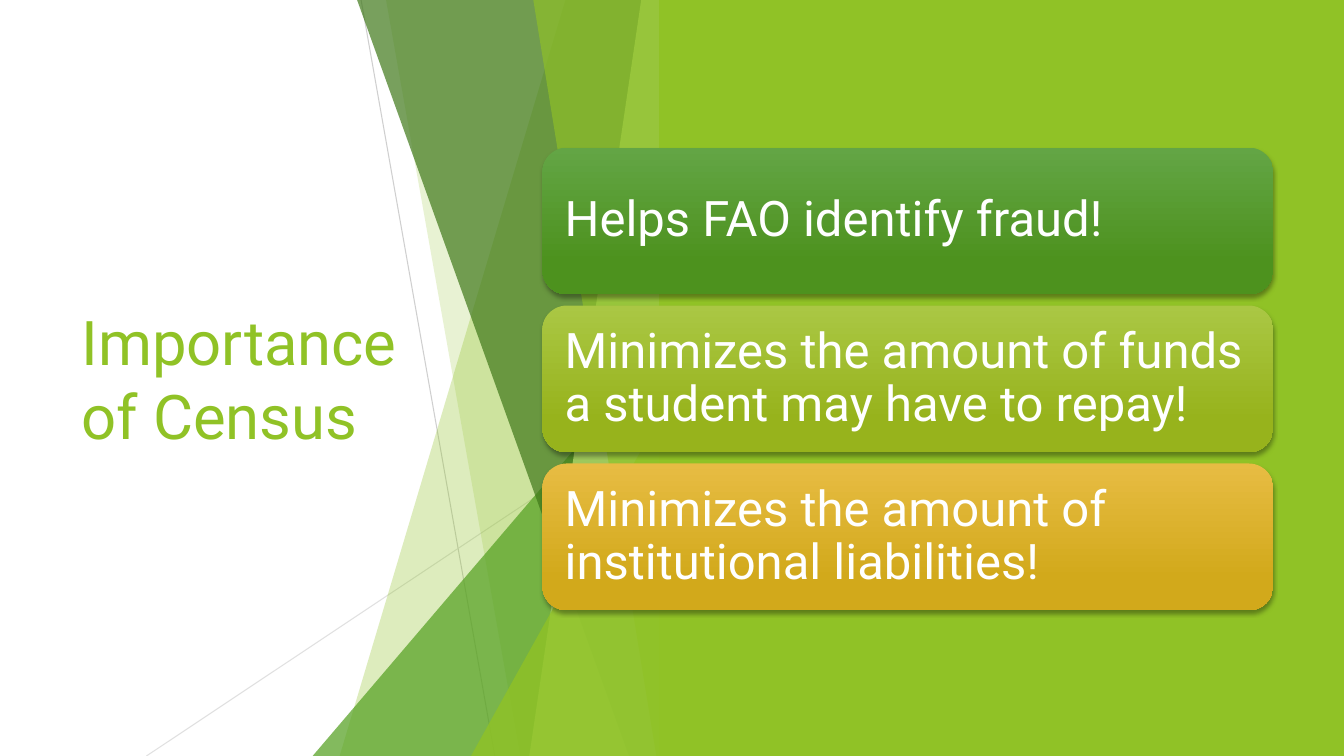
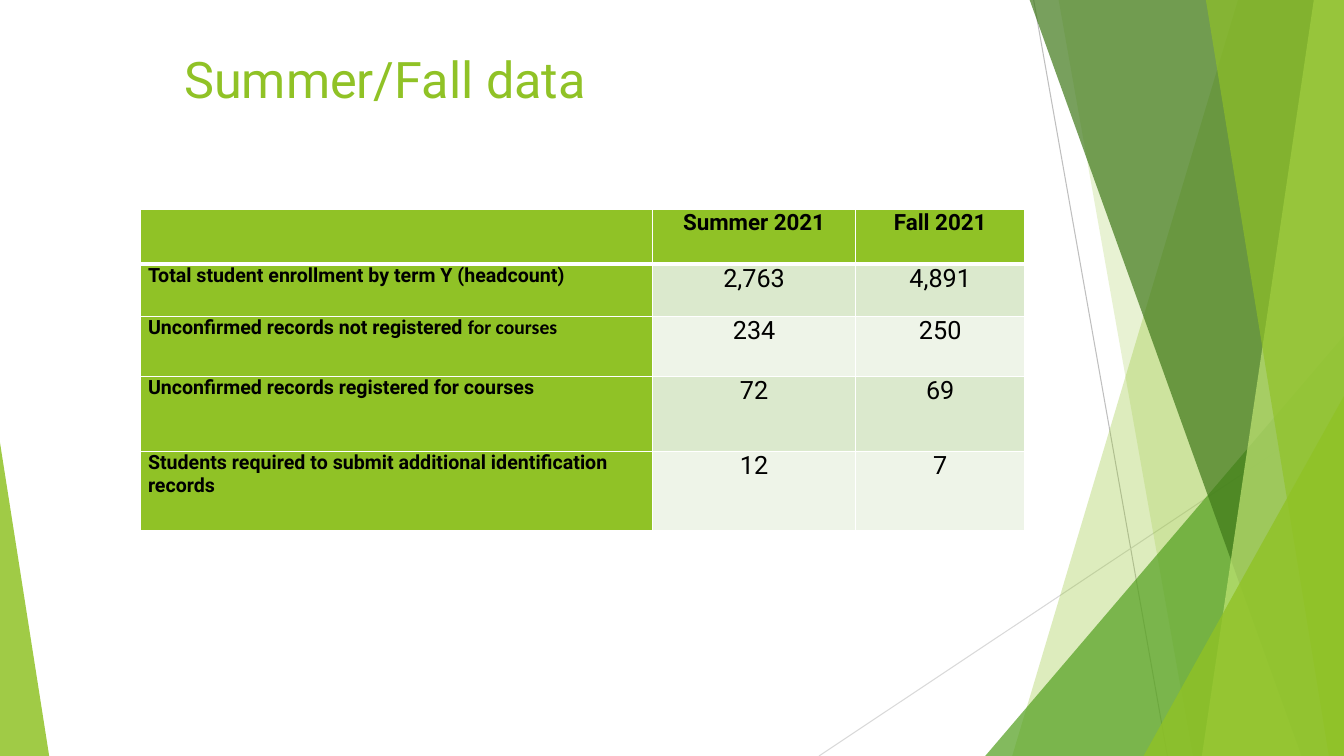
import collections

import lxml.etree
import pptx
import pptx.dml.color
import pptx.enum.shapes
import pptx.enum.text
import pptx.oxml.ns
import pptx.util

Cm = pptx.util.Cm
Pt = pptx.util.Pt
qn = pptx.oxml.ns.qn
Shapes = pptx.enum.shapes.MSO_SHAPE
Anchor = pptx.enum.text.MSO_ANCHOR
Align = pptx.enum.text.PP_ALIGN
Box = collections.namedtuple("Box", "left top width height")

PAGE = Box(0, 0, 33.87, 19.05)
FONT = "Roboto"
GREEN = "90C226"
WHITE = "FFFFFF"
BLACK = "000000"

RAYS = [
    (-7.82, 0, -4.45, 19.05, "BFBFBF", 75),
    (0, 10.24, -13.23, 19.05, "D9D9D9", 80),
]
FACETS = [
    ("band", -2.67, -8.36, GREEN, 30),
    ("band", -7.19, -3.81, GREEN, 20),
    ("corner", 9.04, 10.59, "54A021", 72),
    ("band", -7.92, -1.07, "3F7819", 70),
    ("band", -0.76, -3.58, "C0E474", 70),
    ("band", -3.48, -0.38, GREEN, 65),
    ("corner", 5.05, 9.07, GREEN, 80),
]
CARDS = [
    ("Helps FAO identify fraud!", "63A545", "4D921E"),
    ("Minimizes the amount of funds a student may have to repay!", "AAC744", "97B31C"),
    ("Minimizes the amount of institutional liabilities!", "E7BC43", "D2A91B"),
]
HEADINGS = ["", "Summer 2021", "Fall 2021"]
RECORDS = [
    ("Total student enrollment by term Y (headcount)", "2,763", "4,891"),
    ("Unconfirmed records not registered ", "234", "250"),
    ("Unconfirmed records registered for courses", "72", "69"),
    ("Students required to submit additional identification records", "12", "7"),
]
COLUMN_WIDTHS = [12.9, 5.11, 4.27]
ROW_HEIGHTS = [1.37, 1.32, 1.52, 1.88, 2.01]


def rgb(code):
    """Turn a hex string into a colour."""
    return pptx.dml.color.RGBColor.from_string(code)


def add_node(parent, tag, **attributes):
    """Append a drawing element with the given attributes."""
    values = {key: str(value) for key, value in attributes.items()}
    return lxml.etree.SubElement(parent, qn(tag), values)


def set_opacity(shape, percent):
    """Make the colours of a shape partly transparent."""
    for color in shape.element.spPr.iter(qn("a:srgbClr")):
        add_node(color, "a:alpha", val=percent * 1000)


def finish_shape(shape, color, opacity=100):
    """Give a shape a flat fill without line or shadow."""
    shape.shadow.inherit = False
    shape.fill.solid()
    shape.fill.fore_color.rgb = rgb(color)
    shape.line.fill.background()
    if opacity < 100:
        set_opacity(shape, opacity)


def add_preset(page, kind, box):
    """Place a preset shape in a box."""
    return page.shapes.add_shape(kind, *(Cm(length) for length in box))


def add_triangle(page, box, apex, color, opacity):
    """Draw a triangle whose apex sits at a share of its width."""
    triangle = add_preset(page, Shapes.ISOSCELES_TRIANGLE, box)
    triangle.adjustments[0] = apex
    finish_shape(triangle, color, opacity)


def add_facets(page, right, height, faded_rays=False):
    """Draw the crossing rays and facets that end at a right edge."""
    for x1, y1, x2, y2, color, opacity in RAYS:
        ray = page.shapes.add_connector(
            pptx.enum.shapes.MSO_CONNECTOR.STRAIGHT,
            Cm(right + x1), Cm(y1), Cm(right + x2), Cm(y2))
        ray.line.color.rgb = rgb(color)
        ray.line.width = Pt(0.75)
        add_node(ray.element.spPr, "a:effectLst")
        if faded_rays:
            set_opacity(ray, opacity)
    for kind, first, second, color, opacity in FACETS:
        if kind == "corner":
            box = Box(right - first, height - second, first, second)
            add_triangle(page, box, 1, color, opacity)
        else:
            outline = page.shapes.build_freeform(Cm(right + first), 0)
            outline.add_line_segments([
                (Cm(right), 0), (Cm(right), Cm(height)),
                (Cm(right + second), Cm(height))])
            finish_shape(outline.convert_to_shape(), color, opacity)


def format_text(para, size, color, bold=False, align=Align.LEFT):
    """Set the font and alignment of a paragraph."""
    para.alignment = align
    para.font.name = FONT
    para.font.size = Pt(size)
    para.font.bold = bold
    para.font.color.rgb = rgb(color)


def set_title(page, text, box, size, anchor):
    """Place and format the title placeholder."""
    title = page.shapes.title
    title.left, title.top, title.width, title.height = (Cm(length) for length in box)
    frame = title.text_frame
    frame.text = text
    frame.word_wrap = True
    frame.auto_size = pptx.enum.text.MSO_AUTO_SIZE.NONE
    frame.vertical_anchor = anchor
    format_text(frame.paragraphs[0], size, GREEN)


def add_card(page, box, text, light, dark):
    """Draw a shaded rounded card with its text."""
    card = add_preset(page, Shapes.ROUNDED_RECTANGLE, box)
    card.line.fill.background()
    card.fill.gradient()
    card.fill.gradient_angle = 270
    for stop, color, position in zip(card.fill.gradient_stops, (light, dark), (0, 0.78)):
        stop.color.rgb = rgb(color)
        stop.position = position
    card.shadow.inherit = False
    effects = card.element.spPr.find(qn("a:effectLst"))
    shadow = add_node(effects, "a:outerShdw", blurRad=Pt(3), dist=Pt(2),
                      dir=90 * 60000, rotWithShape=0)
    add_node(add_node(shadow, "a:srgbClr", val=BLACK), "a:alpha", val=35000)
    frame = card.text_frame
    frame.word_wrap = True
    frame.vertical_anchor = Anchor.MIDDLE
    frame.margin_left = frame.margin_right = Cm(0.38)
    frame.margin_top = frame.margin_bottom = Cm(0.38)
    para = frame.paragraphs[0]
    para.text = text
    para.line_spacing = 0.9
    format_text(para, 35, WHITE)


def add_cards(page, box, gap):
    """Stack the cards with equal gaps in a box."""
    height = (box.height - gap * (len(CARDS) - 1)) / len(CARDS)
    for index, card in enumerate(CARDS):
        top = box.top + index * (height + gap)
        add_card(page, Box(box.left, top, box.width, height), *card)


def format_cell(cell, fill, bottom_width):
    """Set the margins, white borders and fill of a cell."""
    cell.margin_left = cell.margin_right = Cm(0.18)
    cell.margin_top = cell.margin_bottom = 0
    properties = cell._tc.get_or_add_tcPr()
    for side, width in zip("LRTB", (1, 1, 1, bottom_width)):
        border = add_node(properties, f"a:ln{side}", w=Pt(width))
        add_node(add_node(border, "a:solidFill"), "a:srgbClr", val=WHITE)
    cell.fill.solid()
    cell.fill.fore_color.rgb = rgb(fill)


def add_records_table(page, box):
    """Build the table of enrollment records."""
    rows = [HEADINGS, *RECORDS]
    table = page.shapes.add_table(
        len(rows), len(HEADINGS), *(Cm(length) for length in box)).table
    for column, width in zip(table.columns, COLUMN_WIDTHS):
        column.width = Cm(width)
    for row, height in zip(table.rows, ROW_HEIGHTS):
        row.height = Cm(height)
    for row_index, texts in enumerate(rows):
        stripe = "DBE9CD" if row_index % 2 else "EEF4E8"
        for column_index, text in enumerate(texts):
            cell = table.cell(row_index, column_index)
            heading = row_index == 0
            label = column_index == 0
            format_cell(cell, GREEN if heading or label else stripe, 3 if heading else 1)
            para = cell.text_frame.paragraphs[0]
            para.text = text
            size = 16 if heading else 14 if label else 18
            format_text(para, size, BLACK, heading or label,
                        Align.LEFT if label else Align.CENTER)
    span = table.cell(2, 0).text_frame.paragraphs[0].add_run()
    span.text = "for courses"
    span.font.name = "Calibri"


def build_importance(page):
    """Build the slide of reasons beside a green panel."""
    set_title(page, "Importance of Census", Box(1.8, 3.84, 9.86, 11.38), 44, Anchor.MIDDLE)
    add_facets(page, 16.92, PAGE.height, faded_rays=True)
    panel = add_preset(page, Shapes.RECTANGLE, Box(16.61, 0, PAGE.width - 16.61, PAGE.height))
    finish_shape(panel, GREEN)
    add_cards(page, Box(13.67, 3.72, 18.42, 11.66), 0.28)


def build_data(page):
    """Build the slide of term data."""
    add_facets(page, PAGE.width, PAGE.height)
    add_triangle(page, Box(0, PAGE.height - 7.9, 1.24, 7.9), 0, GREEN, 85)
    set_title(page, "Summer/Fall data", Box(4.39, 1.09, 23.88, 3.66), 36, Anchor.TOP)
    add_records_table(page, Box(3.55, 5.28, sum(COLUMN_WIDTHS), sum(ROW_HEIGHTS)))


def main():
    """Build and save the deck."""
    deck = pptx.Presentation()
    deck.slide_width = Cm(PAGE.width)
    deck.slide_height = Cm(PAGE.height)
    for build in (build_importance, build_data):
        build(deck.slides.add_slide(deck.slide_layouts[5]))
    deck.save("out.pptx")


if __name__ == "__main__":
    main()
